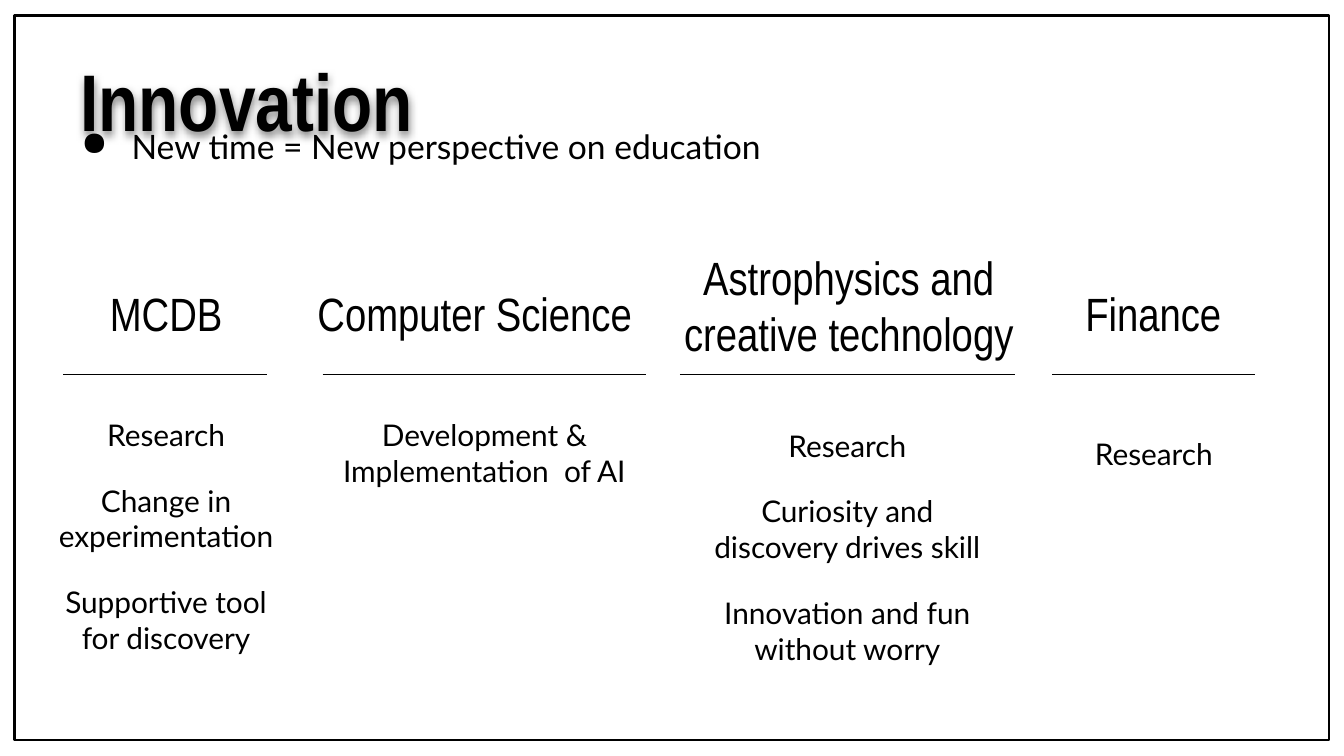
from lxml.etree import SubElement
from pptx import Presentation
from pptx.dml.color import RGBColor
from pptx.enum.shapes import MSO_CONNECTOR, MSO_SHAPE
from pptx.enum.text import MSO_ANCHOR, PP_ALIGN
from pptx.oxml.ns import qn
from pptx.util import Pt

COLORS = {"ink": "000000", "paper": "FFFFFF"}
HEADING_FONT = "Arial Narrow"
BODY_FONT = "Lato"
INSET = 7.2
RULE_Y = 200.5

TITLE = "Innovation"
SUBTITLE = "New time = New perspective on education"
COLUMNS = [
    {
        "heading": "MCDB", "heading_box": (10, 145.5, 158, 44),
        "points": ["Research", "Change in experimentation", "Supportive tool for discovery"],
        "points_box": (21, 216, 136, 142.5), "rule": (34, 143.3),
    },
    {
        "heading": "Computer Science", "heading_box": (162.5, 145.5, 183.5, 44),
        "points": ["Development & Implementation  of AI"],
        "points_box": (172.8, 216, 173.5, 142.5), "rule": (172.8, 346.3),
    },
    {
        "heading": "Astrophysics and creative technology", "heading_box": (346.3, 126, 216.7, 67.7),
        "points": ["Research", "Curiosity and discovery drives skill", "Innovation and fun without worry"],
        "points_box": (367.2, 221.8, 173.5, 142.5), "rule": (364.3, 543.6),
    },
    {
        "heading": "Finance", "heading_box": (526.3, 145.5, 183, 44),
        "points": ["Research"],
        "points_box": (531.4, 226, 173.5, 142.5), "rule": (563.8, 672.5),
    },
]


def color(name):
    return RGBColor.from_string(COLORS[name])


def add_text(page, place, lines, font, size, align=PP_ALIGN.LEFT, bold=False, gap=0):
    box = page.shapes.add_textbox(*map(Pt, place))
    frame = box.text_frame
    frame.word_wrap = True
    frame.vertical_anchor = MSO_ANCHOR.TOP
    frame.margin_left = frame.margin_right = Pt(INSET)
    frame.margin_top = frame.margin_bottom = Pt(INSET)
    for index, line in enumerate(lines):
        paragraph = frame.paragraphs[0] if index == 0 else frame.add_paragraph()
        paragraph.text = line
        paragraph.alignment = align
        if index:
            paragraph.space_before = Pt(gap)
        paragraph.font.name = font
        paragraph.font.size = Pt(size)
        paragraph.font.bold = bold
        paragraph.font.color.rgb = color("ink")
    return box


def add_bullet(paragraph, hanging, indent):
    properties = paragraph._p.get_or_add_pPr()
    properties.set("marL", str(Pt(indent)))
    properties.set("indent", str(-Pt(hanging)))
    bullet_color = SubElement(properties, qn("a:buClr"))
    SubElement(bullet_color, qn("a:srgbClr"), val=COLORS["ink"])
    SubElement(properties, qn("a:buChar"), char="●")
    defaults = properties.find(qn("a:defRPr"))
    if defaults is not None:
        properties.append(defaults)


def add_shadow(box):
    effects = SubElement(box._element.spPr, qn("a:effectLst"))
    shadow = SubElement(effects, qn("a:outerShdw"), blurRad=str(Pt(4.5)), dist=str(Pt(1.5)),
                        dir="5400000", algn="bl", rotWithShape="0")
    shade = SubElement(shadow, qn("a:srgbClr"), val=COLORS["ink"])
    SubElement(shade, qn("a:alpha"), val="50000")


def add_rule(page, left, right):
    rule = page.shapes.add_connector(MSO_CONNECTOR.STRAIGHT, Pt(left), Pt(RULE_Y), Pt(right), Pt(RULE_Y))
    rule.line.color.rgb = color("ink")
    rule.line.width = Pt(0.75)
    SubElement(rule._element.spPr, qn("a:effectLst"))


def main():
    deck = Presentation()
    deck.slide_width, deck.slide_height = Pt(720), Pt(405)
    page = deck.slides.add_slide(deck.slide_layouts[6])
    page.background.fill.solid()
    page.background.fill.fore_color.rgb = color("paper")

    border = page.shapes.add_shape(MSO_SHAPE.RECTANGLE, Pt(8), Pt(8.5), Pt(704), Pt(388))
    border.shadow.inherit = False
    border.fill.background()
    border.line.color.rgb = color("ink")
    border.line.width = Pt(1.5)

    subtitle = add_text(page, (27.4, 57, 535.5, 67.7), [SUBTITLE], BODY_FONT, 18)
    subtitle.text_frame.paragraphs[0].line_spacing = 1.15
    add_bullet(subtitle.text_frame.paragraphs[0], hanging=27, indent=36)

    title = add_text(page, (36, 20.2, 669.6, 55.4), [TITLE], HEADING_FONT, 43, bold=True)
    add_shadow(title)

    for column in COLUMNS:
        add_text(page, column["heading_box"], [column["heading"]], HEADING_FONT, 25, PP_ALIGN.CENTER)
        add_rule(page, *column["rule"])
        add_text(page, column["points_box"], column["points"], BODY_FONT, 16, PP_ALIGN.CENTER, gap=16)

    deck.save("out.pptx")


if __name__ == "__main__":
    main()
